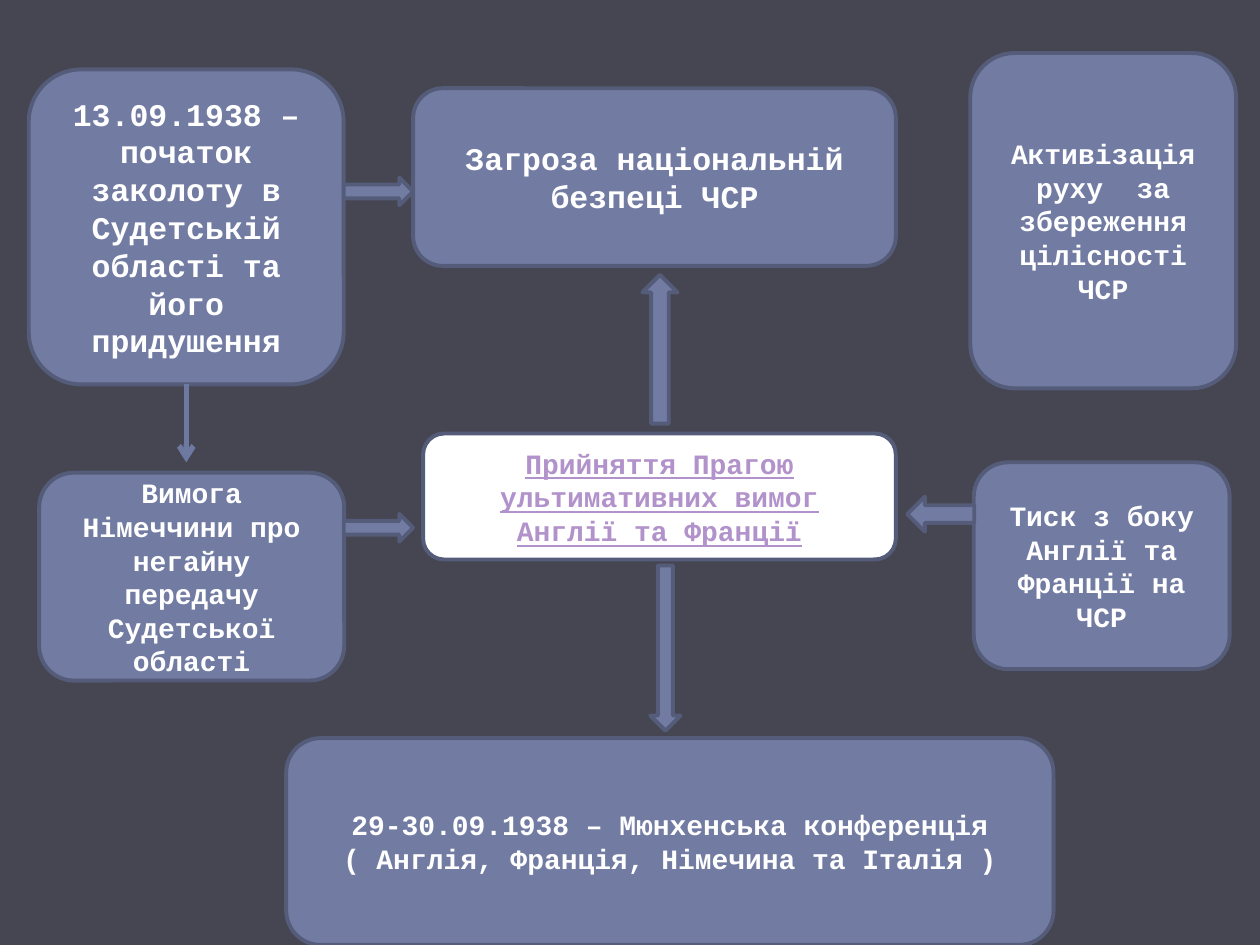
"""Build a slide that maps the events leading to the Munich conference of 1938."""
from dataclasses import dataclass

from lxml import etree
from pptx import Presentation
from pptx.dml.color import RGBColor
from pptx.enum.shapes import MSO_CONNECTOR, MSO_SHAPE
from pptx.enum.text import MSO_ANCHOR, PP_ALIGN
from pptx.oxml.ns import qn
from pptx.util import Cm, Pt

ROUNDED = MSO_SHAPE.ROUNDED_RECTANGLE
RIGHT, LEFT = MSO_SHAPE.RIGHT_ARROW, MSO_SHAPE.LEFT_ARROW
UP, DOWN = MSO_SHAPE.UP_ARROW, MSO_SHAPE.DOWN_ARROW
STRAIGHT = MSO_CONNECTOR.STRAIGHT
MIDDLE, CENTER = MSO_ANCHOR.MIDDLE, PP_ALIGN.CENTER
BOTTOM_SITE = 2
FONT = "Courier New"
COLORS = {
    "background": "464653",
    "box": "727CA3",
    "outline": "545C79",
    "connector": "6E79A1",
    "white": "FFFFFF",
    "highlight": "B292CA",
}


@dataclass(frozen=True)
class Block:
    """A filled shape with its place in centimetres."""
    left: float
    top: float
    width: float
    height: float
    shape: int = ROUNDED
    fill: str = "box"


@dataclass(frozen=True)
class Event:
    """A block with its text and format."""
    block: Block
    lines: tuple[str, ...]
    size: int = 16
    color: str = "white"
    underline: bool = False


REVOLT = Event(
    Block(0.58, 1.4, 6.35, 6.35),
    ("13.09.1938 – початок заколоту в Судетській області та його придушення",),
    size=18,
)
EVENTS = (
    Event(Block(8.33, 1.78, 9.73, 3.58), ("Загроза національній безпеці ЧСР",), size=18),
    REVOLT,
    Event(Block(19.56, 1.07, 5.36, 6.76),
          ("Активізація руху  за збереження цілісності ЧСР",)),
    Event(Block(0.79, 9.53, 6.15, 4.19),
          ("Вимога Німеччини про негайну передачу Судетської області",)),
    Event(Block(19.63, 9.32, 5.16, 4.17), ("Тиск з боку Англії та Франції на ЧСР",)),
    Event(Block(8.53, 8.74, 9.53, 2.54, fill="white"),
          ("Прийняття Прагою ультимативних вимог Англії та Франції",),
          color="highlight", underline=True),
    Event(Block(5.77, 14.88, 15.47, 4.17),
          ("29-30.09.1938 – Мюнхенська конференція",
           "( Англія, Франція, Німечина та Італія )")),
)
ARROWS = (
    Block(6.93, 3.58, 1.4, 0.56, RIGHT),
    Block(18.29, 10.01, 1.35, 0.71, LEFT),
    Block(13.11, 11.4, 0.61, 3.33, DOWN),
    Block(6.93, 10.36, 1.4, 0.56, RIGHT),
    Block(12.95, 5.54, 0.71, 3, UP),
)


def rgb(name: str) -> RGBColor:
    """Return a named colour."""
    return RGBColor.from_string(COLORS[name])


def add_block(s, block: Block):
    """Draw a filled and outlined shape."""
    sp = s.shapes.add_shape(block.shape, Cm(block.left), Cm(block.top),
                            Cm(block.width), Cm(block.height))
    sp.shadow.inherit = False
    sp.fill.solid()
    sp.fill.fore_color.rgb = rgb(block.fill)
    sp.line.color.rgb = rgb("outline")
    sp.line.width = Pt(2.25)
    return sp


def add_text(p, text: str, *, size: int, color: str, underline: bool) -> None:
    """Write one centred bold paragraph."""
    p.alignment = CENTER
    r = p.add_run()
    r.text = text
    r.font.name = FONT
    r.font.size = Pt(size)
    r.font.bold = True
    r.font.underline = underline
    r.font.color.rgb = rgb(color)


def add_event(s, event: Event):
    """Draw an event box with its text."""
    sp = add_block(s, event.block)
    tf = sp.text_frame
    tf.word_wrap = True
    tf.vertical_anchor = MIDDLE
    for i, line in enumerate(event.lines):
        p = tf.add_paragraph() if i else tf.paragraphs[0]
        add_text(p, line, size=event.size, color=event.color, underline=event.underline)
    return sp


def add_arrow_below(s, sp, end_y: float) -> None:
    """Draw a thin arrow from the bottom of a shape down to a height."""
    x = sp.left + sp.width // 2
    line = s.shapes.add_connector(STRAIGHT, x, sp.top + sp.height, x, Cm(end_y))
    line.begin_connect(sp, BOTTOM_SITE)
    line.line.color.rgb = rgb("connector")
    line.line.width = Pt(3)
    etree.SubElement(line.line._get_or_add_ln(), qn("a:tailEnd"), type="arrow")
    etree.SubElement(line._element.spPr, qn("a:effectLst"))


def main() -> None:
    """Build and save the slide."""
    prs = Presentation()
    prs.slide_width, prs.slide_height = Cm(25.4), Cm(19.05)
    s = prs.slides.add_slide(prs.slide_layouts[6])
    s.background.fill.solid()
    s.background.fill.fore_color.rgb = rgb("background")
    boxes = {event: add_event(s, event) for event in EVENTS}
    for arrow in ARROWS:
        add_block(s, arrow)
    add_arrow_below(s, boxes[REVOLT], 9.32)
    prs.save("out.pptx")


if __name__ == "__main__":
    main()
